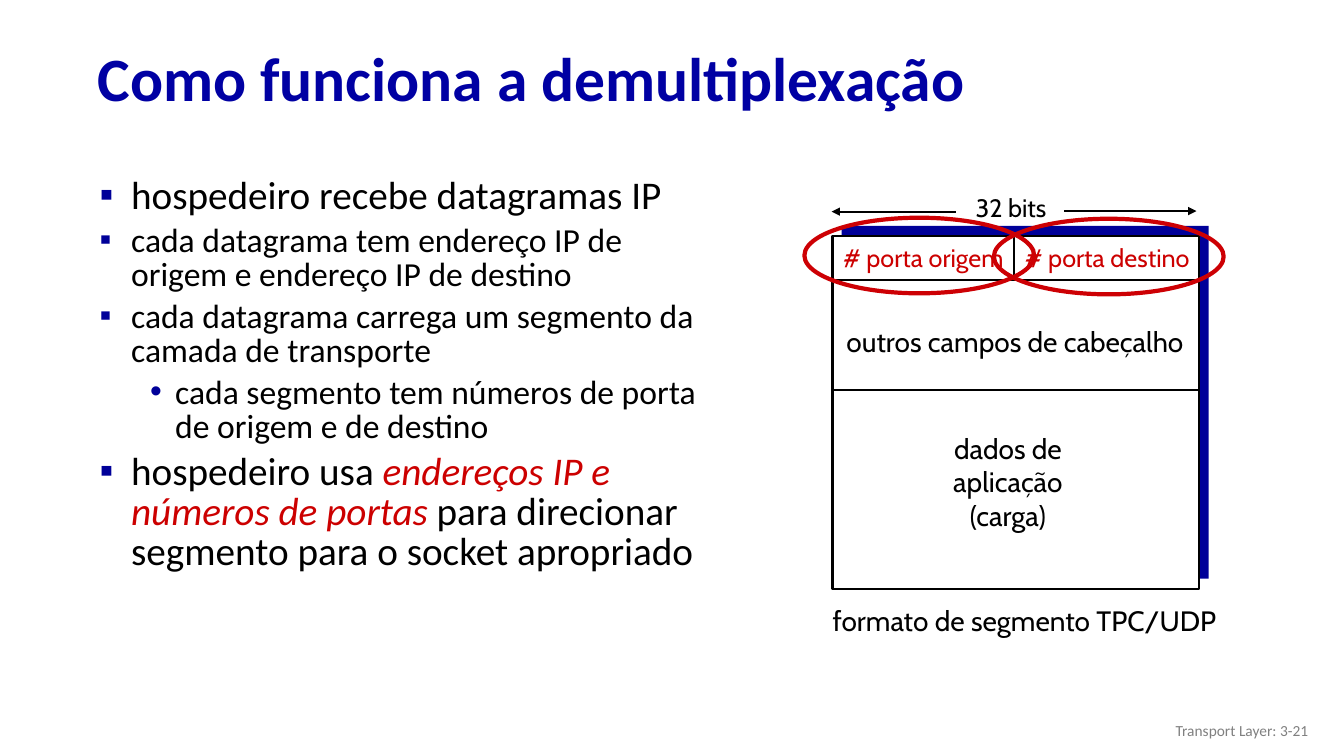
from dataclasses import dataclass

import pptx
import pptx.dml.color
import pptx.enum.shapes
import pptx.enum.text
import pptx.oxml
import pptx.oxml.ns
import pptx.util

Pt = pptx.util.Pt
RGBColor = pptx.dml.color.RGBColor
Align = pptx.enum.text.PP_ALIGN
Anchor = pptx.enum.text.MSO_ANCHOR
Preset = pptx.enum.shapes.MSO_SHAPE

TITLE_BLUE = RGBColor(0x00, 0x00, 0xA3)
NAVY = RGBColor(0x00, 0x00, 0x99)
RED = RGBColor(0xCC, 0x00, 0x00)
RING_RED = RGBColor(0xCD, 0x00, 0x04)
GRAY = RGBColor(0x80, 0x80, 0x80)
BLACK = RGBColor(0x00, 0x00, 0x00)
WHITE = RGBColor(0xFF, 0xFF, 0xFF)


@dataclass
class Area:
    left: float
    top: float
    width: float
    height: float

    def lengths(self) -> list:
        return [Pt(value) for value in (self.left, self.top, self.width, self.height)]


@dataclass
class Label:
    text: str
    area: Area
    size: float
    color: RGBColor = BLACK
    font: str = "Cabin"
    bold: bool = False
    align: Align = Align.CENTER
    anchor: Anchor = Anchor.TOP
    wrap: bool = False
    line_spacing: float = 1.0


@dataclass
class Bullet:
    pieces: list  # (text, emphasised) pairs
    size: float
    level: int = 0


@dataclass
class Outline:
    preset: Preset
    area: Area
    fill: RGBColor | None = None
    line: RGBColor | None = None
    weight: float = 1.5


@dataclass
class Rule:
    start: tuple
    end: tuple
    arrow: bool = False


# Bullet character, left margin and hanging indent of each level
LEVELS = [("▪", 22.5, 22.5), ("•", 54, 18)]

TITLE = Label("Como funciona a demultiplexação", Area(62.64, 23.04, 874.08, 70.56), 44,
              TITLE_BLUE, "Calibri", True, Align.LEFT, Anchor.MIDDLE, True, 0.9)
FOOTER = Label("Transport Layer: 3-21", Area(725.76, 507.6, 216, 28.8), 11,
               GRAY, "Calibri", False, Align.RIGHT, Anchor.MIDDLE, True)

BULLET_AREA = Area(64.08, 123.12, 449.28, 219.6)
BULLETS = [
    Bullet([("hospedeiro recebe datagramas IP", False)], 28),
    Bullet([("cada datagrama tem endereço IP de origem e endereço IP de destino", False)], 24),
    Bullet([("cada datagrama carrega um segmento da camada de transporte", False)], 24),
    Bullet([("cada segmento tem números de porta de origem e de destino", False)], 24, 1),
    Bullet([("hospedeiro usa ", False), ("endereços IP e números de portas", True),
            (" para direcionar segmento para o socket apropriado", False)], 28),
]

# Segment diagram
SEGMENT = Area(594.72, 168.48, 262.08, 252)
RIGHT = SEGMENT.left + SEGMENT.width
PORTS_BOTTOM, HEADER_BOTTOM, MIDDLE = 200.16, 278.64, 724.32
SEGMENT_SHAPES = [
    Outline(Preset.RECTANGLE, Area(601.2, 161.28, SEGMENT.width, SEGMENT.height), fill=NAVY),
    Outline(Preset.RECTANGLE, SEGMENT, fill=WHITE, line=BLACK),
]
RULES = [
    Rule((SEGMENT.left, PORTS_BOTTOM), (RIGHT, PORTS_BOTTOM)),
    Rule((SEGMENT.left, HEADER_BOTTOM), (RIGHT, HEADER_BOTTOM)),
    Rule((MIDDLE, PORTS_BOTTOM), (MIDDLE, SEGMENT.top)),
    Rule((760.32, 150.8), (854.64, 150.8), arrow=True),
    Rule((682.56, 151.2), (594, 151.2), arrow=True),
]
SEGMENT_LABELS = [
    Label("# porta origem", Area(591.12, 169.92, 136.8, 28.8), 18, RED),
    Label("# porta destino", Area(721.44, 169.92, 138.96, 28.8), 18, RED),
    Label("32 bits", Area(688.32, 133.92, 67.68, 28.8), 18),
    Label("dados de\naplicação\n(carga)", Area(671.76, 304.56, 96.48, 79.92), 20),
    Label("outros campos de cabeçalho", Area(591.12, 228.24, 267.84, 31.68), 20),
    Label("formato de segmento TPC/UDP", Area(585.36, 427.68, 293.04, 31.68), 20),
]
RINGS = [Outline(Preset.OVAL, Area(left, top, 164.16, 54), line=RING_RED, weight=3)
         for left, top in ((574.56, 155.52), (709.92, 156.24))]


def assign(target, values: dict) -> None:
    for name, value in values.items():
        setattr(target, name, value)


def add_span(para, text: str, color: RGBColor, values: dict) -> None:
    span = para.add_run()
    span.text = text
    assign(span.font, values)
    span.font.color.rgb = color


def add_label(page, label: Label) -> None:
    box = page.shapes.add_textbox(*label.area.lengths())
    frame = box.text_frame
    assign(frame, {"word_wrap": label.wrap, "vertical_anchor": label.anchor})
    for index, line in enumerate(label.text.split("\n")):
        para = frame.add_paragraph() if index else frame.paragraphs[0]
        assign(para, {"alignment": label.align, "line_spacing": label.line_spacing})
        add_span(para, line, label.color,
                 {"name": label.font, "size": Pt(label.size), "bold": label.bold})


def add_bullets(page, area: Area, bullets: list[Bullet]) -> None:
    frame = page.shapes.add_textbox(*area.lengths()).text_frame
    frame.word_wrap = True
    for index, bullet in enumerate(bullets):
        para = frame.add_paragraph() if index else frame.paragraphs[0]
        assign(para, {"level": bullet.level, "line_spacing": 0.85,
                      "space_before": Pt(bullet.size * 0.22)})
        mark, margin, hanging = LEVELS[bullet.level]
        properties = para._p.get_or_add_pPr()
        properties.set("marL", str(Pt(margin)))
        properties.set("indent", str(-Pt(hanging)))
        namespace = pptx.oxml.ns.nsdecls("a")
        for xml in (f'<a:buClr {namespace}><a:srgbClr val="{NAVY}"/></a:buClr>',
                    f'<a:buFont {namespace} typeface="Arial"/>',
                    f'<a:buChar {namespace} char="{mark}"/>'):
            properties.append(pptx.oxml.parse_xml(xml))
        for text, emphasised in bullet.pieces:
            add_span(para, text, RED if emphasised else BLACK,
                     {"name": "Calibri", "size": Pt(bullet.size), "italic": emphasised})


def add_outline(page, outline: Outline) -> None:
    shape = page.shapes.add_shape(outline.preset, *outline.area.lengths())
    shape.shadow.inherit = False
    for paint, color in ((shape.fill, outline.fill), (shape.line.fill, outline.line)):
        if color is None:
            paint.background()
        else:
            paint.solid()
            paint.fore_color.rgb = color
    if outline.line is not None:
        shape.line.width = Pt(outline.weight)


def add_rule(page, rule: Rule) -> None:
    ends = [Pt(value) for value in rule.start + rule.end]
    connector = page.shapes.add_connector(pptx.enum.shapes.MSO_CONNECTOR.STRAIGHT, *ends)
    connector.line.color.rgb = BLACK
    connector.line.width = Pt(1.5)
    namespace = pptx.oxml.ns.nsdecls("a")
    if rule.arrow:
        connector.line._get_or_add_ln().append(
            pptx.oxml.parse_xml(f'<a:tailEnd {namespace} type="triangle"/>'))
    connector._element.spPr.append(pptx.oxml.parse_xml(f"<a:effectLst {namespace}/>"))


def main() -> None:
    deck = pptx.Presentation()
    assign(deck, {"slide_width": Pt(960), "slide_height": Pt(540)})
    page = deck.slides.add_slide(deck.slide_layouts[6])

    # Title and bullets
    add_label(page, TITLE)
    add_bullets(page, BULLET_AREA, BULLETS)

    # Diagram, with the port fields ringed
    for outline in SEGMENT_SHAPES:
        add_outline(page, outline)
    for rule in RULES:
        add_rule(page, rule)
    for label in SEGMENT_LABELS:
        add_label(page, label)
    for ring in RINGS:
        add_outline(page, ring)

    # Footer
    add_label(page, FOOTER)
    deck.save("out.pptx")


if __name__ == "__main__":
    main()
